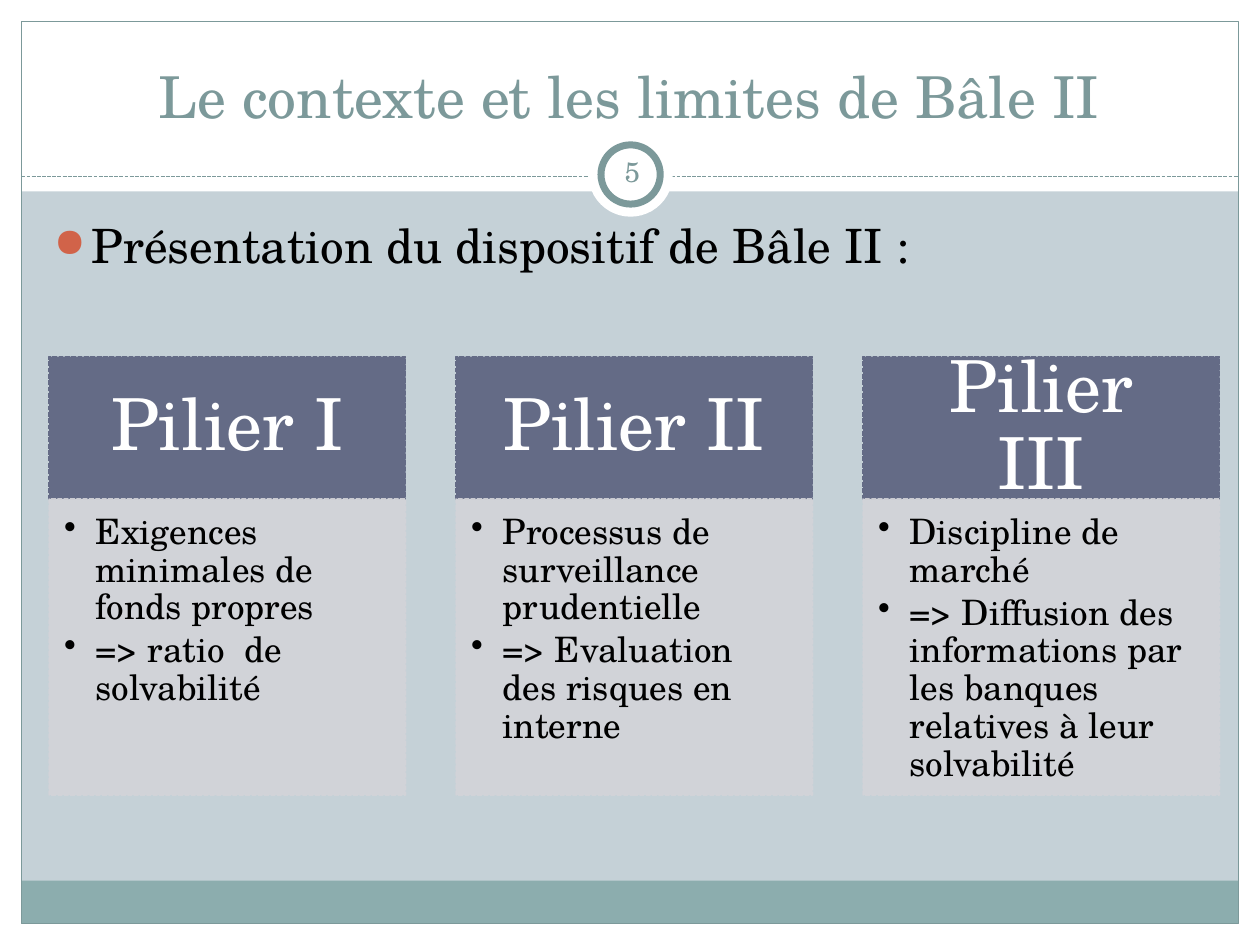
from pptx import Presentation
from pptx.dml.color import RGBColor
from pptx.enum import dml, shapes, text
from pptx.oxml.ns import qn
from pptx.util import Inches, Pt
from lxml import etree

FONT = "TeX Gyre Schola"
COLORS = {
    "background": "C5D1D7", "white": "FFFFFF", "black": "000000",
    "teal": "7C999A", "footer": "8CADAE", "bullet": "D16349",
    "header": "646B86", "panel": "D3D4D9",
}
PILLARS = [
    ("Pilier I", ["Exigences minimales de fonds propres",
                  "=> ratio  de solvabilité"]),
    ("Pilier II", ["Processus de surveillance prudentielle",
                   "=> Evaluation des risques en interne"]),
    ("Pilier III", ["Discipline de marché",
                    "=> Diffusion des informations par les banques "
                    "relatives à leur solvabilité"]),
]


def color(name):
    return RGBColor.from_string(COLORS[name])


def set_line(line, name, width, dashed=False):
    line.color.rgb = color(name)
    line.width = Pt(width)
    if dashed:
        line.dash_style = dml.MSO_LINE.SQUARE_DOT


def add_box(slide, box, fill=None, line=None, width=0.75, dashed=False,
            kind=shapes.MSO_SHAPE.RECTANGLE):
    shape = slide.shapes.add_shape(kind, *map(Inches, box))
    shape.shadow.inherit = False
    if fill:
        shape.fill.solid()
        shape.fill.fore_color.rgb = color(fill)
    else:
        shape.fill.background()
    if line:
        set_line(shape.line, line, width, dashed)
    else:
        shape.line.fill.background()
    return shape


def set_opacity(shape, percent):
    for rgb in shape.element.spPr.iter(qn("a:srgbClr")):
        etree.SubElement(rgb, qn("a:alpha")).set("val", str(percent * 1000))


def set_frame(frame, anchor, insets=(0.1, 0.05, 0.1, 0.05)):
    frame.word_wrap = True
    frame.auto_size = text.MSO_AUTO_SIZE.NONE
    frame.vertical_anchor = anchor
    (frame.margin_left, frame.margin_top,
     frame.margin_right, frame.margin_bottom) = map(Inches, insets)


def write(paragraph, words, size, name, alignment=text.PP_ALIGN.CENTER):
    paragraph.alignment = alignment
    run = paragraph.add_run()
    run.text = words
    run.font.size = Pt(size)
    run.font.name = FONT
    run.font.color.rgb = color(name)


def add_bullet(paragraph, character, indent, name=None, percent=None):
    """Call after paragraph spacing, so the XML order stays valid."""
    properties = paragraph._p.get_or_add_pPr()
    properties.set("marL", str(Inches(indent)))
    properties.set("indent", str(-Inches(indent)))
    if name:
        bullet_color = etree.SubElement(properties, qn("a:buClr"))
        etree.SubElement(bullet_color, qn("a:srgbClr")).set("val", COLORS[name])
    if percent:
        size = etree.SubElement(properties, qn("a:buSzPct"))
        size.set("val", str(percent * 1000))
    etree.SubElement(properties, qn("a:buChar")).set("char", character)


def add_backdrop(slide, width, height):
    # White margins and title band
    margin = 0.17
    for box in [(0, height - margin, width, margin), (0, 0, width, 1.52),
                (0, 0, margin, height), (width - margin, 0, margin, height)]:
        add_box(slide, box, "white")
    # Footer strip and outer frame
    inner = width - 2 * margin
    add_box(slide, (margin, 6.99, inner, 0.34), "footer")
    add_box(slide, (margin, margin, inner, height - 2 * margin), line="teal")
    # Dashed rule under the title
    rule = slide.shapes.add_connector(
        shapes.MSO_CONNECTOR.STRAIGHT, Inches(margin), Inches(1.4),
        Inches(width - margin), Inches(1.4))
    set_line(rule.line, "teal", 0.75, dashed=True)
    etree.SubElement(rule.element.spPr, qn("a:effectLst"))


def add_number_badge(slide, box, number):
    left, top, size = box
    add_box(slide, (left, top, size, size), "white",
            kind=shapes.MSO_SHAPE.OVAL)
    ring = size - 0.2
    add_box(slide, (left + 0.1, top + 0.1, ring, ring), "white", "teal", 4,
            kind=shapes.MSO_SHAPE.OVAL)
    label = slide.shapes.add_textbox(
        *map(Inches, (left + 0.1, top + 0.07, 0.5, 0.48)))
    set_frame(label.text_frame, text.MSO_ANCHOR.MIDDLE, (0.05,) * 4)
    write(label.text_frame.paragraphs[0], number, 16, "teal")


def place_title(slide, box, words):
    title = slide.shapes.title
    title.left, title.top, title.width, title.height = map(Inches, box)
    set_frame(title.text_frame, text.MSO_ANCHOR.BOTTOM)
    write(title.text_frame.paragraphs[0], words, 33, "teal")
    # Bring the title in front of the white band
    title.element.getparent().append(title.element)


def add_intro(slide, box, words):
    body = slide.shapes.add_textbox(*map(Inches, box))
    set_frame(body.text_frame, text.MSO_ANCHOR.TOP)
    paragraph = body.text_frame.paragraphs[0]
    paragraph.space_before = Pt(5.4)
    write(paragraph, words, 27, "black", text.PP_ALIGN.LEFT)
    add_bullet(paragraph, "●", 0.3, "bullet", 85)


def add_pillar(slide, box, heading, points):
    left, top, width, height = box
    header_height = 1.13
    # Heading
    header = add_box(slide, (left, top, width, header_height),
                     "header", "header", 0.9, dashed=True)
    set_frame(header.text_frame, text.MSO_ANCHOR.MIDDLE,
              (0.32, 0.18, 0.32, 0.18))
    paragraph = header.text_frame.paragraphs[0]
    paragraph.line_spacing = 0.9
    write(paragraph, heading, 41, "white")
    # Bulleted panel
    panel = add_box(
        slide, (left, top + header_height, width, height - header_height),
        "panel", "panel", 0.9, dashed=True)
    set_opacity(panel, 90)
    frame = panel.text_frame
    set_frame(frame, text.MSO_ANCHOR.TOP, (0.12, 0.12, 0.16, 0.17))
    for index, point in enumerate(points):
        paragraph = frame.add_paragraph() if index else frame.paragraphs[0]
        paragraph.line_spacing = 0.9
        paragraph.space_after = Pt(3)
        write(paragraph, point, 20, "black", text.PP_ALIGN.LEFT)
        add_bullet(paragraph, "•", 0.25)


def main():
    presentation = Presentation()
    presentation.slide_width = Inches(10)
    presentation.slide_height = Inches(7.5)
    slide = presentation.slides.add_slide(presentation.slide_layouts[5])
    slide.background.fill.solid()
    slide.background.fill.fore_color.rgb = color("background")

    add_backdrop(slide, 10, 7.5)
    place_title(slide, (0.33, 0.25, 9.33, 0.83),
                "Le contexte et les limites de Bâle II")
    add_number_badge(slide, (4.67, 1.05, 0.67), "5")
    add_intro(slide, (0.33, 1.67, 9.3, 5),
              "Présentation du dispositif de Bâle II :")
    for column, (heading, points) in enumerate(PILLARS):
        add_pillar(slide, (0.39 + column * 3.23, 2.83, 2.83, 3.48),
                   heading, points)
    presentation.save("out.pptx")


if __name__ == "__main__":
    main()
